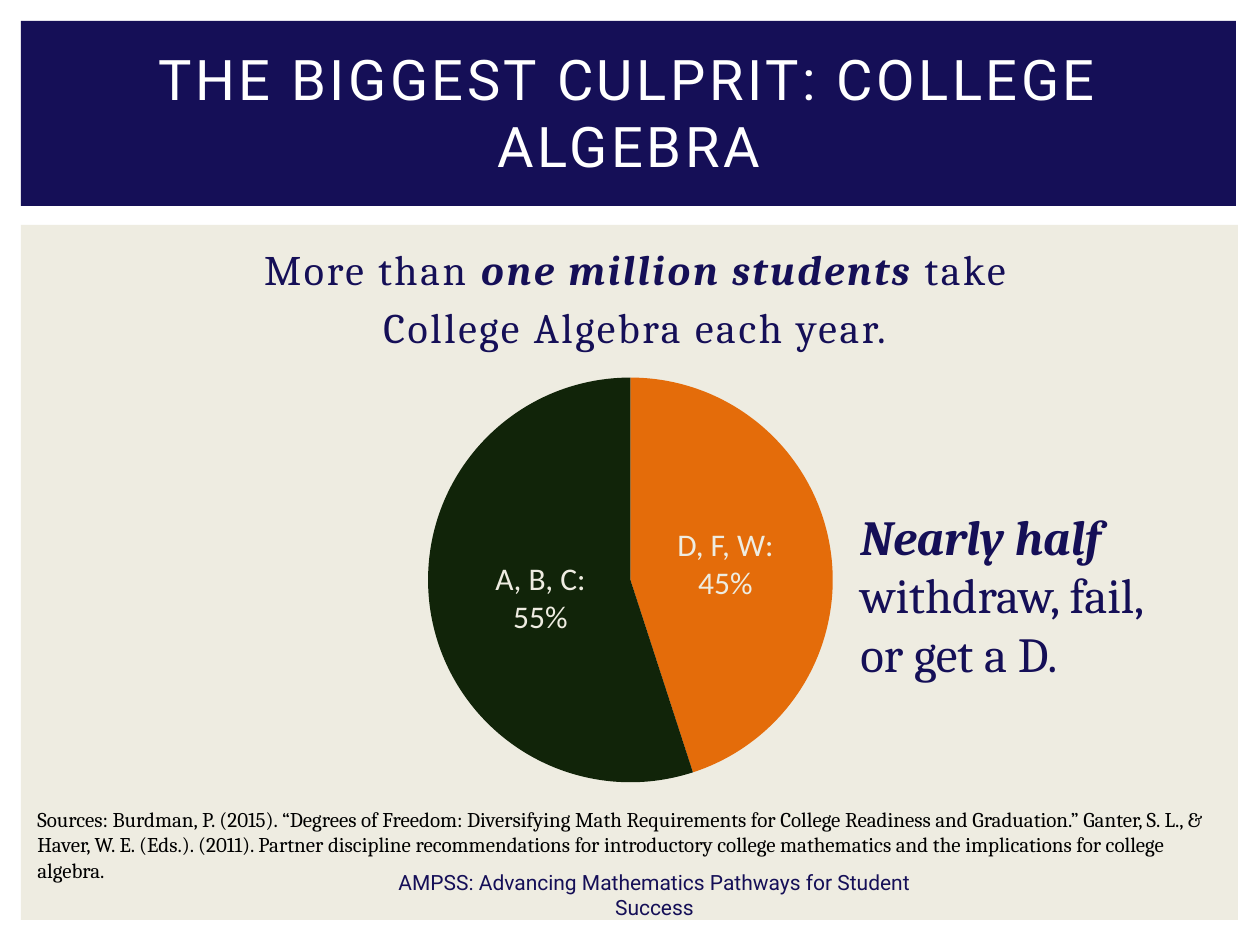
from lxml.etree import SubElement
from pptx import Presentation
from pptx.chart.data import CategoryChartData
from pptx.dml.color import RGBColor
from pptx.enum.chart import XL_CHART_TYPE
from pptx.enum.shapes import MSO_SHAPE
from pptx.enum.text import MSO_ANCHOR, PP_ALIGN
from pptx.oxml.ns import qn
from pptx.util import Emu, Pt

PX = 914400 / 126
COLORS = {
    "navy": "150F57",
    "cream": "EEECE1",
    "white": "FFFFFF",
    "black": "000000",
    "orange": "E46C0A",
    "green": "112409",
}


def px(*lengths):
    return [Emu(round(length * PX)) for length in lengths]


def color(name):
    return RGBColor.from_string(COLORS[name])


def add_panel(slide, box, fill):
    shape = slide.shapes.add_shape(MSO_SHAPE.RECTANGLE, *px(*box))
    shape.shadow.inherit = False
    shape.fill.solid()
    shape.fill.fore_color.rgb = color(fill)
    shape.line.fill.background()


def add_text(slide, box, paragraphs, size, font, fill, align=PP_ALIGN.CENTER,
             anchor=MSO_ANCHOR.TOP, spacing=0, before=0):
    text_frame = slide.shapes.add_textbox(*px(*box)).text_frame
    text_frame.word_wrap = True
    text_frame.vertical_anchor = anchor
    for index, pieces in enumerate(paragraphs):
        paragraph = text_frame.add_paragraph() if index else text_frame.paragraphs[0]
        paragraph.alignment = align
        paragraph.space_before = Pt(before)
        for text, strong in pieces:
            run = paragraph.add_run()
            run.text = text
            run.font.size = Pt(size)
            run.font.name = font
            run.font.color.rgb = color(fill)
            run.font.bold = run.font.italic = strong
            if spacing:
                run.font._element.set("spc", str(round(spacing * 100)))


def set_plot_layout(chart, left, top, width, height):
    plot_area = chart._chartSpace.chart.plotArea
    layout = plot_area.find(qn("c:layout"))
    if layout is None:
        layout = SubElement(plot_area, qn("c:layout"))
        plot_area.insert(0, layout)
    manual = SubElement(layout, qn("c:manualLayout"))
    settings = (("layoutTarget", "inner"), ("xMode", "edge"), ("yMode", "edge"),
                ("x", left), ("y", top), ("w", width), ("h", height))
    for name, value in settings:
        SubElement(manual, qn(f"c:{name}")).set("val", str(value))


def add_pie(slide, box, values, fills):
    data = CategoryChartData()
    data.categories = ["1", "2"]
    data.add_series("Series 1", values)
    chart = slide.shapes.add_chart(XL_CHART_TYPE.PIE, *px(*box), data).chart
    chart.has_title = False
    chart.has_legend = False
    chart.font.name = "Calibri"
    chart.font.size = Pt(18)
    chart.font.color.rgb = color("black")
    for index, fill in enumerate(fills):
        point_format = chart.plots[0].series[0].points[index].format
        point_format.fill.solid()
        point_format.fill.fore_color.rgb = color(fill)
        point_format.line.fill.background()
    set_plot_layout(chart, 0.245, 0.04, 0.51, 0.92)


def main():
    presentation = Presentation()
    presentation.slide_width, presentation.slide_height = px(1260, 945)
    slide = presentation.slides.add_slide(presentation.slide_layouts[6])

    add_panel(slide, (21, 225, 1217, 695), "cream")
    add_panel(slide, (21, 21, 1215, 185), "navy")
    add_text(slide, (53, 237, 1164, 607),
             [[("More than ", False), ("one million students", True), (" take", False)],
              [("College Algebra each year.", False)]],
             24, "Cambria", "navy", spacing=1.5, before=4.8)
    add_text(slide, (345, 876, 619, 38),
             [[("AMPSS: Advancing Mathematics Pathways for Student Success", False)]],
             12, "Roboto", "navy", anchor=MSO_ANCHOR.MIDDLE)
    add_text(slide, (25, 39, 1208, 145),
             [[("THE BIGGEST CULPRIT: COLLEGE ALGEBRA", False)]],
             32, "Roboto", "white", anchor=MSO_ANCHOR.MIDDLE, spacing=2)
    add_text(slide, (25, 800, 1208, 89),
             [[("Sources: Burdman, P. (2015). “Degrees of Freedom: Diversifying Math "
                "Requirements for College Readiness and Graduation.” Ganter, S. L., & "
                "Haver, W. E. (Eds.). (2011). Partner discipline recommendations for "
                "introductory college mathematics and the implications for college "
                "algebra.", False)]],
             12, "Cambria", "black", align=PP_ALIGN.LEFT, anchor=MSO_ANCHOR.MIDDLE)
    add_pie(slide, (233, 360, 795, 440), (45, 55), ("orange", "green"))
    add_text(slide, (848, 500, 341, 190),
             [[("Nearly half", True), (" withdraw, fail, or get a D.", False)]],
             28, "Cambria", "navy", align=PP_ALIGN.LEFT)
    add_text(slide, (470, 553, 141, 89), [[("A, B, C: 55%", False)]],
             18, "Calibri", "cream")
    add_text(slide, (655, 519, 141, 89), [[("D, F, W:", False)], [("45%", False)]],
             18, "Calibri", "cream")

    presentation.save("out.pptx")


if __name__ == "__main__":
    main()
